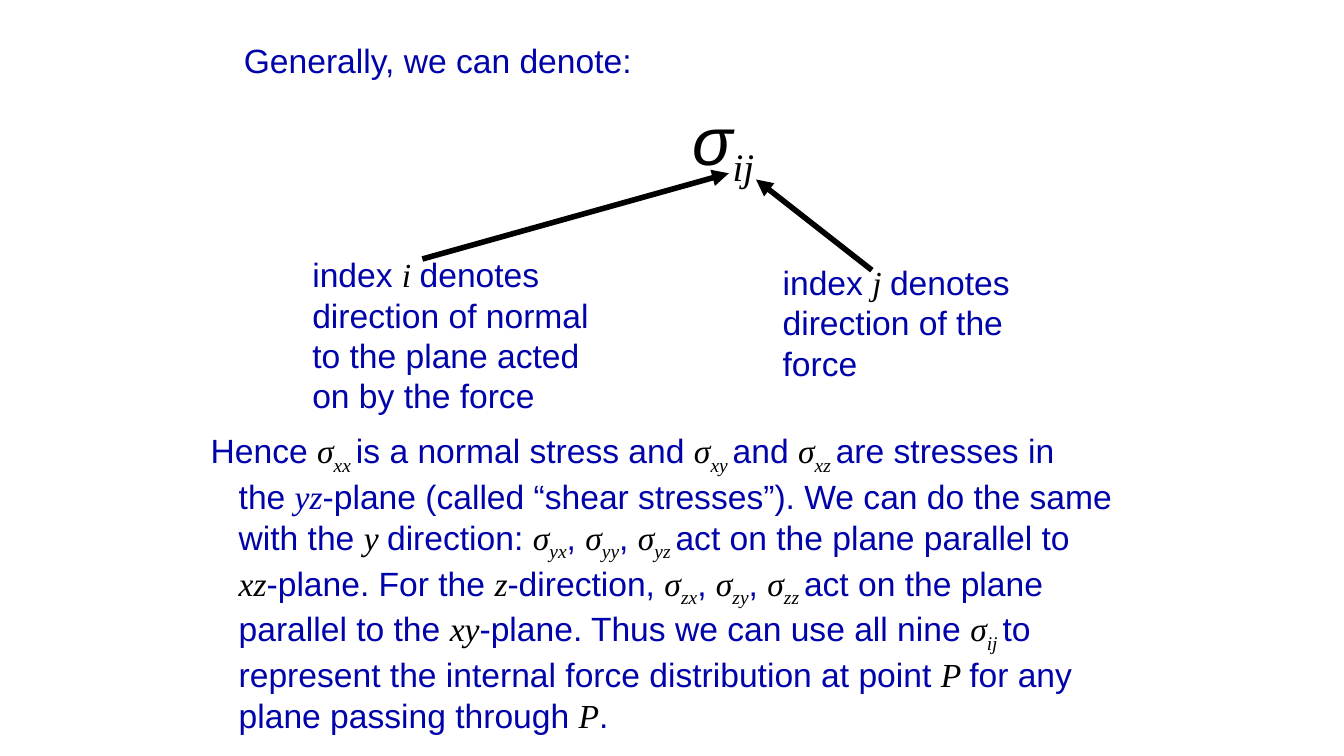
from lxml.etree import SubElement
from pptx import Presentation
from pptx.dml.color import RGBColor
from pptx.enum.shapes import MSO_CONNECTOR
from pptx.enum.text import MSO_ANCHOR, MSO_AUTO_SIZE, PP_ALIGN
from pptx.oxml.ns import qn
from pptx.util import Pt

BLUE = RGBColor(0x00, 0x03, 0xAA)
BLACK = RGBColor(0x00, 0x00, 0x00)
WORDS = {"name": "Arial", "size": Pt(24), "italic": False}
MATH = {"name": "Times New Roman", "size": Pt(24), "italic": True}
HANGING_INDENT = Pt(20)

INDEX_I = ["index `i `denotes", "direction of normal",
           "to the plane acted", "on by the force"]
INDEX_J = ["index `j `denotes", "direction of the", "force"]
STRESSES = [
    "Hence `σ_xx `is a normal stress and `σ_xy `and `σ_xz `are stresses in",
    "the `~yz`-plane (called “shear stresses”). We can do the same",
    "with the `y `direction: `σ_yx`, `σ_yy`, `σ_yz `act on the plane parallel to",
    "`xz`-plane. For the `z`-direction, `σ_zx`, `σ_zy`, `σ_zz `act on the plane",
    "parallel to the `xy`-plane. Thus we can use all nine `σ_ij `to",
    "represent the internal force distribution at point `P `for any",
    "plane passing through `P`.",
]


def add_run(p, text, fmt, color, subscript=False):
    r = p.add_run()
    r.text = text
    for name, value in fmt.items():
        setattr(r.font, name, value)
    r.font.color.rgb = color
    if subscript:
        r.font._element.set("baseline", "-25000")


def add_line(p, line):
    """Backticks enclose math, _ starts its subscript, ~ makes it blue."""
    for i, piece in enumerate(line.split("`")):
        if i % 2 == 0:
            if piece:
                add_run(p, piece, WORDS, BLUE)
            continue
        color = BLUE if piece.startswith("~") else BLACK
        base, _, sub = piece.lstrip("~").partition("_")
        add_run(p, base, MATH, color)
        if sub:
            add_run(p, sub, MATH, color, subscript=True)


def fill_text(sp, box, lines, hanging=0):
    sp.left, sp.top, sp.width, sp.height = (Pt(v) for v in box)
    tf = sp.text_frame
    frame = {"word_wrap": True, "auto_size": MSO_AUTO_SIZE.NONE,
             "vertical_anchor": MSO_ANCHOR.TOP}
    for name, value in frame.items():
        setattr(tf, name, value)
    for i, line in enumerate(lines):
        p = tf.add_paragraph() if i else tf.paragraphs[0]
        p.alignment = PP_ALIGN.LEFT
        p.space_before = Pt(0)
        pPr = p._p.get_or_add_pPr()
        pPr.set("marL", str(hanging if i else 0))
        pPr.set("indent", "0")
        SubElement(pPr, qn("a:buNone"))
        add_line(p, line)


def add_text(s, box, lines):
    fill_text(s.shapes.add_textbox(0, 0, 0, 0), box, lines)


def add_symbol(s, box):
    sp = s.shapes.add_textbox(*(Pt(v) for v in box))
    tf = sp.text_frame
    for side in ("left", "top", "right", "bottom"):
        setattr(tf, f"margin_{side}", 0)
    tf.word_wrap = True
    p = tf.paragraphs[0]
    add_run(p, "σ", {**WORDS, "size": Pt(48), "italic": True}, BLACK)
    add_run(p, "ij", {**MATH, "size": Pt(48)}, BLACK, subscript=True)


def add_arrow(s, *ends):
    c = s.shapes.add_connector(MSO_CONNECTOR.STRAIGHT, *(Pt(v) for v in ends))
    c.line.color.rgb = BLACK
    c.line.width = Pt(4)
    SubElement(c.line._get_or_add_ln(), qn("a:tailEnd"), type="triangle")
    SubElement(c._element.spPr, qn("a:effectLst"))


def main():
    prs = Presentation()
    prs.slide_width, prs.slide_height = Pt(960), Pt(540)
    s = prs.slides.add_slide(prs.slide_layouts[1])
    title, body = s.placeholders
    fill_text(title, (167, 25, 385, 36), ["Generally, we can denote:"])
    add_symbol(s, (494.4, 70, 58, 64))
    add_arrow(s, 301.7, 185, 520.6, 123.8)
    add_text(s, (216, 178, 214, 124), INDEX_I)
    add_text(s, (552, 183.6, 180, 94), INDEX_J)
    add_arrow(s, 622.8, 193, 540, 128.2)
    fill_text(body, (143.3, 303.8, 672.5, 211), STRESSES, HANGING_INDENT)
    prs.save("out.pptx")


if __name__ == "__main__":
    main()
